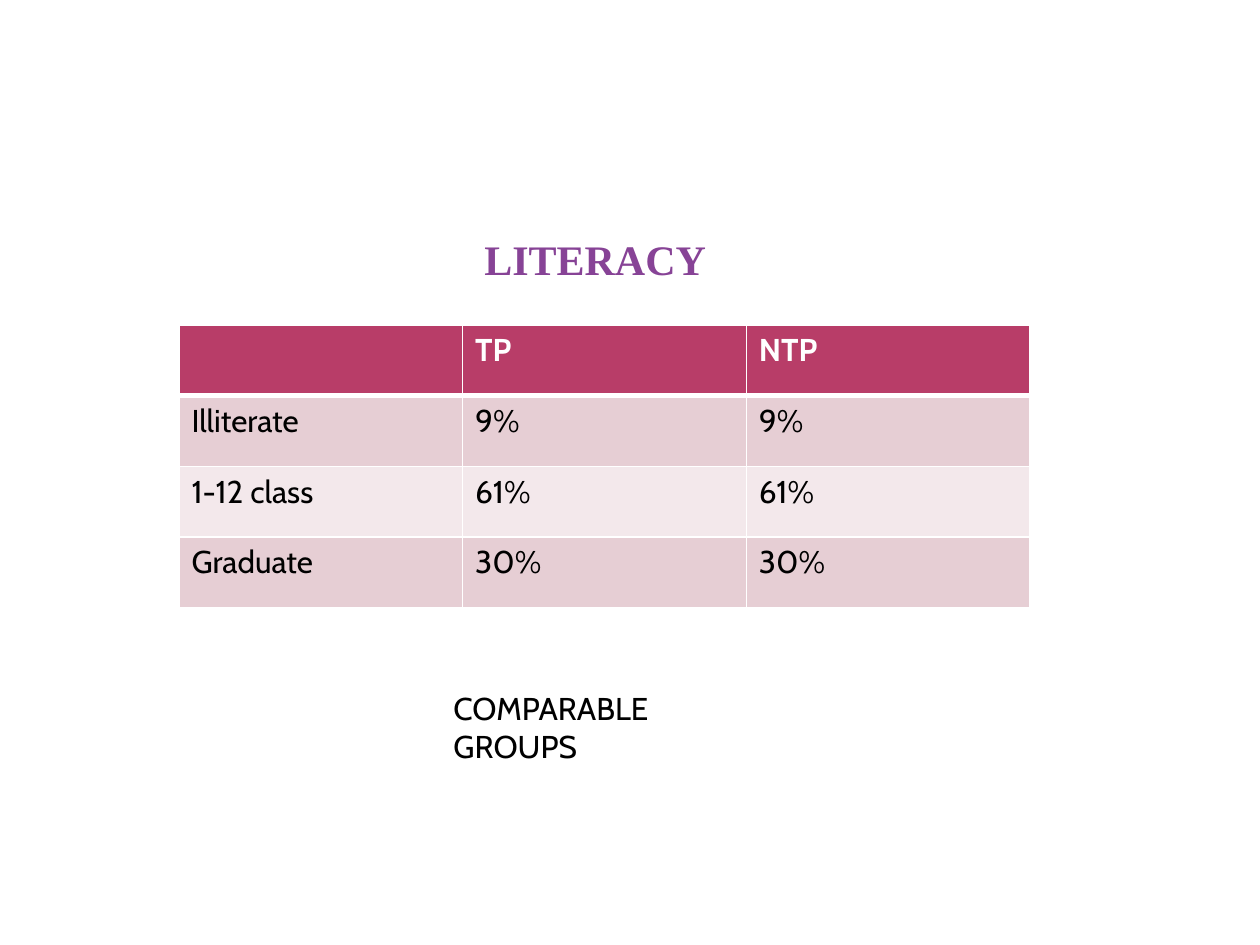
from lxml import etree
from pptx import Presentation
from pptx.dml.color import RGBColor
from pptx.oxml.ns import qn
from pptx.util import Pt

PX = 914400 // 126  # EMU per px

TITLE = "LITERACY"
ROWS = [
    ("", "TP", "NTP"),
    ("Illiterate", "9%", "9%"),
    ("1-12 class", "61%", "61%"),
    ("Graduate", "30%", "30%"),
]
NOTE = "COMPARABLE GROUPS"

TITLE_BOX = (63, 227, 998, 663)
TITLE_INDENT = 409
TABLE_BOX = (179, 325, 851, 283)
NOTE_BOX = (441, 683, 321, 50)

HEADER_FILL = "B83D68"
BAND_FILLS = ("F3E8EB", "E6CED4")
WHITE, BLACK, PURPLE = "FFFFFF", "000000", "874396"
BODY_FONT, TITLE_FONT = "Cabin", "Times New Roman"


def px(*lengths):
    return [n * PX for n in lengths]


def color(hex_string):
    return RGBColor.from_string(hex_string)


def add_run(p, text, font, size, hex_color, bold=False):
    r = p.add_run()
    r.text = text
    r.font.name = font
    r.font.size = Pt(size)
    r.font.bold = bold
    r.font.color.rgb = color(hex_color)


def add_text_box(slide, box):
    tf = slide.shapes.add_textbox(*px(*box)).text_frame
    tf.word_wrap = True
    return tf.paragraphs[0]


def set_borders(cell, widths):
    """Draw white cell borders; widths maps each side to points."""
    tcPr = cell._tc.get_or_add_tcPr()
    for side, width in widths.items():
        ln = etree.SubElement(tcPr, qn(f"a:ln{side}"), w=str(Pt(width)))
        fill = etree.SubElement(ln, qn("a:solidFill"))
        etree.SubElement(fill, qn("a:srgbClr"), val=WHITE)


def add_literacy_table(slide):
    table = slide.shapes.add_table(len(ROWS), len(ROWS[0]), *px(*TABLE_BOX)).table
    for i, row in enumerate(ROWS):
        header = i == 0
        for j, text in enumerate(row):
            cell = table.cell(i, j)
            set_borders(cell, {"L": 1, "R": 1, "T": 3 if i == 1 else 1, "B": 3 if header else 1})
            cell.fill.solid()
            cell.fill.fore_color.rgb = color(HEADER_FILL if header else BAND_FILLS[i % 2])
            if text:
                p = cell.text_frame.paragraphs[0]
                add_run(p, text, BODY_FONT, 18, WHITE if header else BLACK, header)


def main():
    prs = Presentation()
    prs.slide_width, prs.slide_height = px(1260, 945)
    s = prs.slides.add_slide(prs.slide_layouts[6])

    p = add_text_box(s, TITLE_BOX)
    p._p.get_or_add_pPr().set("marL", str(TITLE_INDENT * PX))
    add_run(p, TITLE, TITLE_FONT, 24, PURPLE, True)

    add_literacy_table(s)
    add_run(add_text_box(s, NOTE_BOX), NOTE, BODY_FONT, 18, BLACK)
    prs.save("out.pptx")


if __name__ == "__main__":
    main()
